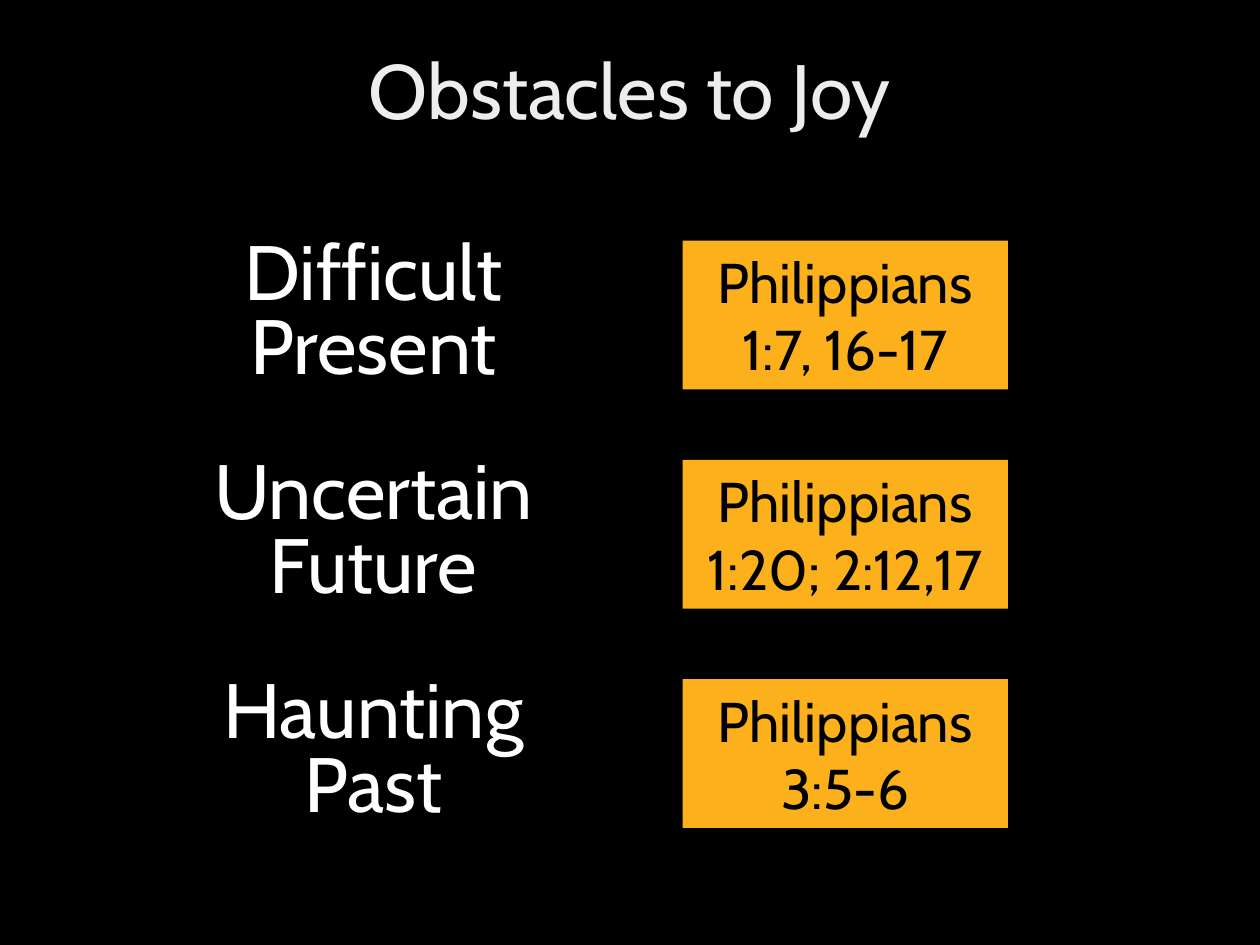
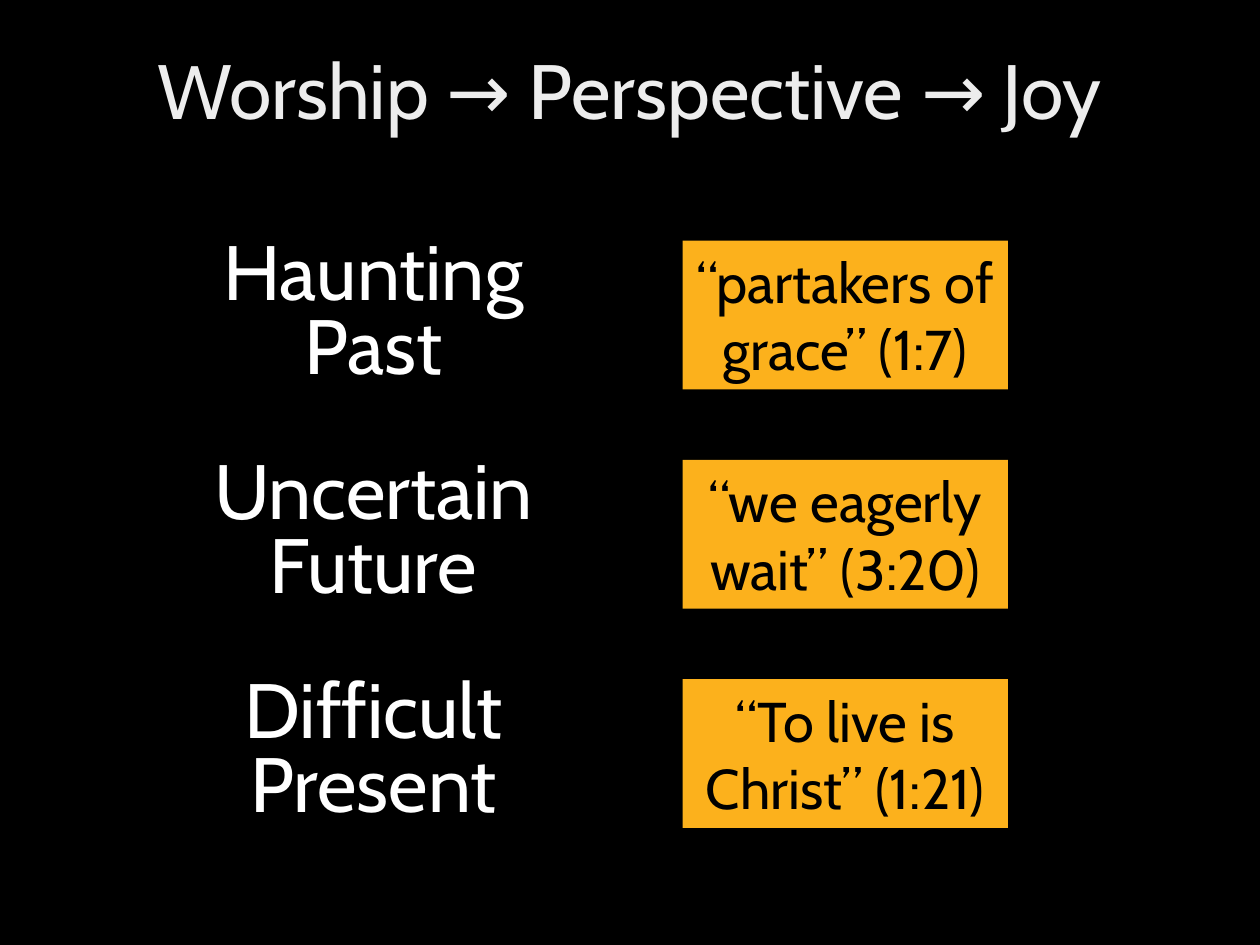
from pptx import Presentation
from pptx.dml.color import RGBColor
from pptx.enum import shapes, text
from pptx.util import Cm, Pt

COLOURS = {
    "background": "000000",
    "title": "EDEDED",
    "obstacle": "FFFFFF",
    "verse": "000000",
    "verse_box": "FCB11C",
}
FONT = "Cabin"

# Each row is centred on its own height, one row pitch below the last.
FIRST_ROW_CENTRE, ROW_PITCH = 6.35, 4.42
OBSTACLE_HEIGHT, VERSE_HEIGHT = 3.3, 3.0

SLIDES = [
    ("Obstacles to Joy", [
        ("Difficult Present", "Philippians 1:7, 16-17"),
        ("Uncertain Future", "Philippians 1:20; 2:12,17"),
        ("Haunting Past", "Philippians 3:5-6"),
    ]),
    ("Worship → Perspective → Joy", [
        ("Haunting Past", "“partakers of grace” (1:7)"),
        ("Uncertain Future", "“we eagerly wait” (3:20)"),
        ("Difficult Present", "“To live is Christ” (1:21)"),
    ]),
]


def write_centred(shape, words, size, colour, line_spacing=1.0):
    frame = shape.text_frame
    frame.word_wrap = True
    frame.vertical_anchor = text.MSO_ANCHOR.MIDDLE
    paragraph = frame.paragraphs[0]
    paragraph.alignment = text.PP_ALIGN.CENTER
    paragraph.line_spacing = line_spacing
    run = paragraph.add_run()
    run.text = words
    run.font.name = FONT
    run.font.size = Pt(size)
    run.font.color.rgb = RGBColor.from_string(COLOURS[colour])
    return frame


presentation = Presentation()
presentation.slide_width = Cm(25.4)
presentation.slide_height = Cm(19.05)
blank_layout = presentation.slide_layouts[6]

for title, rows in SLIDES:
    slide = presentation.slides.add_slide(blank_layout)
    background = slide.background.fill
    background.solid()
    background.fore_color.rgb = RGBColor.from_string(COLOURS["background"])

    title_box = slide.shapes.add_textbox(Cm(1.75), Cm(0.84), Cm(21.9), Cm(2.13))
    write_centred(title_box, title, 44, "title", 0.9)

    for index, (obstacle, verse) in enumerate(rows):
        centre = FIRST_ROW_CENTRE + index * ROW_PITCH

        obstacle_box = slide.shapes.add_textbox(
            Cm(3.43), Cm(centre - OBSTACLE_HEIGHT / 2), Cm(8.2), Cm(OBSTACLE_HEIGHT))
        frame = write_centred(obstacle_box, obstacle, 44, "obstacle", 0.8)
        frame.margin_left = frame.margin_right = Cm(0.18)
        frame.margin_top = frame.margin_bottom = Cm(0.1)
        frame.auto_size = text.MSO_AUTO_SIZE.SHAPE_TO_FIT_TEXT

        verse_box = slide.shapes.add_shape(
            shapes.MSO_SHAPE.RECTANGLE,
            Cm(13.76), Cm(centre - VERSE_HEIGHT / 2), Cm(6.56), Cm(VERSE_HEIGHT))
        verse_box.shadow.inherit = False
        verse_box.fill.solid()
        verse_box.fill.fore_color.rgb = RGBColor.from_string(COLOURS["verse_box"])
        verse_box.line.fill.background()
        frame = write_centred(verse_box, verse, 32, "verse")
        frame.auto_size = text.MSO_AUTO_SIZE.SHAPE_TO_FIT_TEXT

presentation.save("out.pptx")
